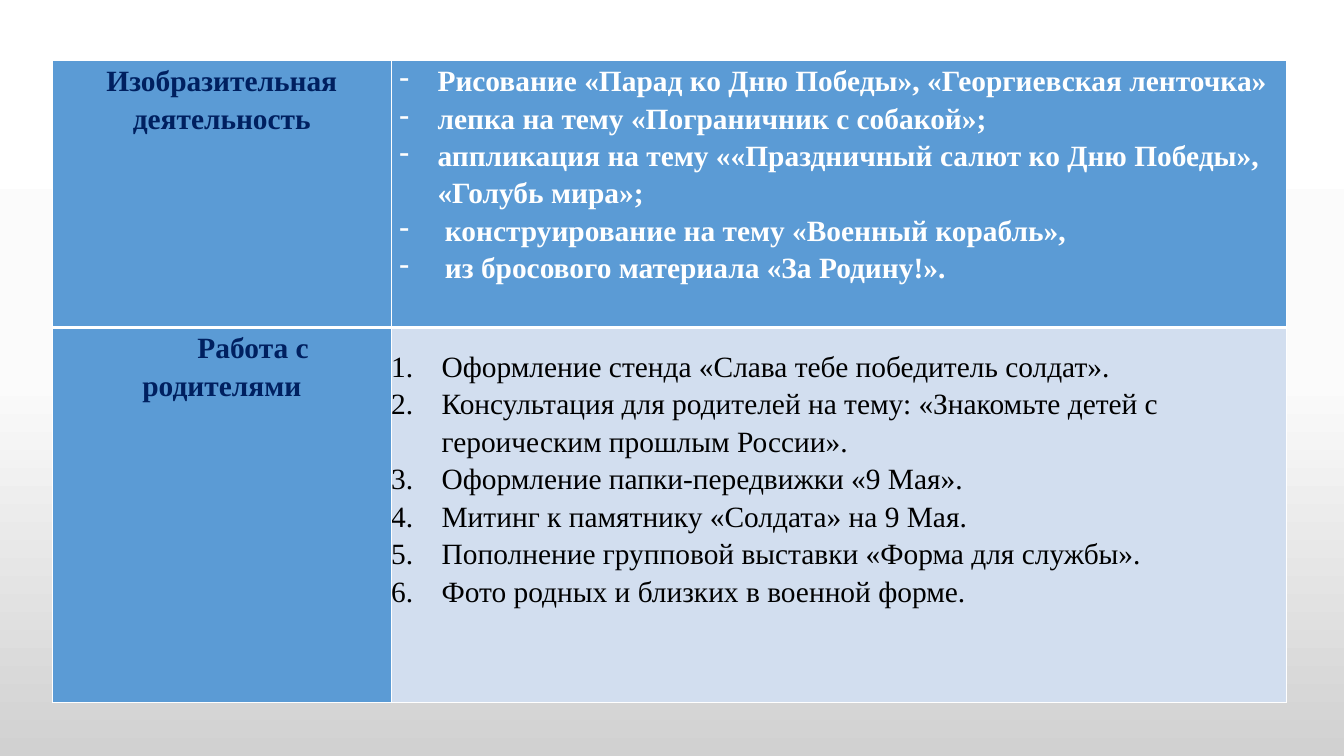
from copy import deepcopy

from lxml import etree
from pptx import Presentation
from pptx.dml.color import RGBColor
from pptx.enum.text import MSO_ANCHOR, PP_ALIGN
from pptx.oxml.ns import qn
from pptx.util import Inches, Pt

CENTER, LEFT = PP_ALIGN.CENTER, PP_ALIGN.LEFT
TOP, MIDDLE = MSO_ANCHOR.TOP, MSO_ANCHOR.MIDDLE

COLORS = {
    "white": "FFFFFF", "mist": "FBFBFB", "grey": "D1D1D1",
    "blue": "5B9BD5", "pale": "D2DEEF", "navy": "002060", "black": "000000",
}

ARTS = [
    "Рисование «Парад ко Дню Победы», «Георгиевская ленточка»",
    "лепка на тему «Пограничник с собакой»;",
    "аппликация на тему ««Праздничный салют ко Дню Победы», «Голубь мира»;",
    " конструирование на тему «Военный корабль»,",
    " из бросового материала «За Родину!».",
]
FAMILY = [
    "Оформление стенда «Слава тебе победитель солдат».",
    "Консультация для родителей на тему: «Знакомьте детей с героическим прошлым России».",
    "Оформление папки-передвижки «9 Мая».",
    "Митинг к памятнику «Солдата» на 9 Мая.",
    "Пополнение групповой выставки «Форма для службы».",
    "Фото родных и близких в военной форме.",
]


def rgb(name):
    return RGBColor.from_string(COLORS[name])


class Page:
    font, size, pitch = "Times New Roman", Pt(21), 1.15

    def __init__(self, slide):
        self.slide = slide

    def backdrop(self, names):
        """Vertical gradient with evenly spaced stops."""
        fill = self.slide.background.fill
        fill.gradient()
        fill.gradient_angle = 270
        stops = next(self.slide.element.iter(qn("a:gsLst")))
        for _ in names[2:]:
            stops.insert(1, deepcopy(stops[0]))
        for i, (stop, name) in enumerate(zip(fill.gradient_stops, names)):
            stop.color.rgb = rgb(name)
            stop.position = i / (len(names) - 1)

    def table(self, left, top, cols, rows):
        frame = self.slide.shapes.add_table(
            len(rows), len(cols), Inches(left), Inches(top),
            Inches(sum(cols)), Inches(sum(rows)))
        grid = frame.table
        grid.first_row = grid.horz_banding = False
        for col, width in zip(grid.columns, cols):
            col.width = Inches(width)
        for row, height in zip(grid.rows, rows):
            row.height = Inches(height)
        return grid

    def cell(self, cell, fill, pads=(0.08, 0, 0.08, 0), anchor=TOP, base=1):
        """Fill, margins and white borders; base is the bottom line width."""
        cell.fill.solid()
        cell.fill.fore_color.rgb = rgb(fill)
        (cell.margin_left, cell.margin_top,
         cell.margin_right, cell.margin_bottom) = map(Inches, pads)
        cell.vertical_anchor = anchor
        props = cell._tc.get_or_add_tcPr()
        for i, (side, width) in enumerate(zip("LRTB", (1, 1, 1, base))):
            line = etree.Element(qn("a:ln" + side), w=str(Pt(width)))
            solid = etree.SubElement(line, qn("a:solidFill"))
            etree.SubElement(solid, qn("a:srgbClr"), val=COLORS["white"])
            props.insert(i, line)

    def text(self, cell, lines, color, bold=True, align=LEFT,
             margin=0, indent=0, mark=None):
        """One paragraph per line; mark is a bullet tag with its attributes."""
        frame = cell.text_frame
        for i, line in enumerate(lines):
            para = frame.add_paragraph() if i else frame.paragraphs[0]
            para.alignment = align
            para.line_spacing = self.pitch
            props = para._p.get_or_add_pPr()
            props.set("marL", str(Inches(margin)))
            props.set("indent", str(Inches(indent)))
            if mark:
                tag, attrs = mark
                etree.SubElement(props, qn(tag), attrs)
            run = para.add_run()
            run.text = line
            run.font.name, run.font.size = self.font, self.size
            run.font.bold = bold
            run.font.color.rgb = rgb(color)


def main():
    deck = Presentation()
    deck.slide_width, deck.slide_height = Inches(13.33), Inches(7.5)
    page = Page(deck.slides.add_slide(deck.slide_layouts[6]))
    page.backdrop(["white", "mist", "grey"])
    grid = page.table(0.52, 0.6, (3.36, 8.88), (2.65, 3.72))

    # Art activities
    head, body = grid.cell(0, 0), grid.cell(0, 1)
    page.cell(head, "blue", base=3)
    page.text(head, ["Изобразительная деятельность"], "navy", align=CENTER)
    page.cell(body, "blue", base=3)
    page.text(body, ARTS, "white", margin=0.38, indent=-0.38,
              mark=("a:buChar", {"char": "-"}))

    # Work with parents
    head, body = grid.cell(1, 0), grid.cell(1, 1)
    page.cell(head, "blue")
    page.text(head, ["Работа с родителями"], "navy", align=CENTER, indent=0.62)
    page.cell(body, "pale", pads=(0, 0, 0, 0.75), anchor=MIDDLE)
    page.text(body, FAMILY, "black", bold=False, margin=0.5, indent=-0.5,
              mark=("a:buAutoNum", {"type": "arabicPeriod"}))

    deck.save("out.pptx")


if __name__ == "__main__":
    main()
